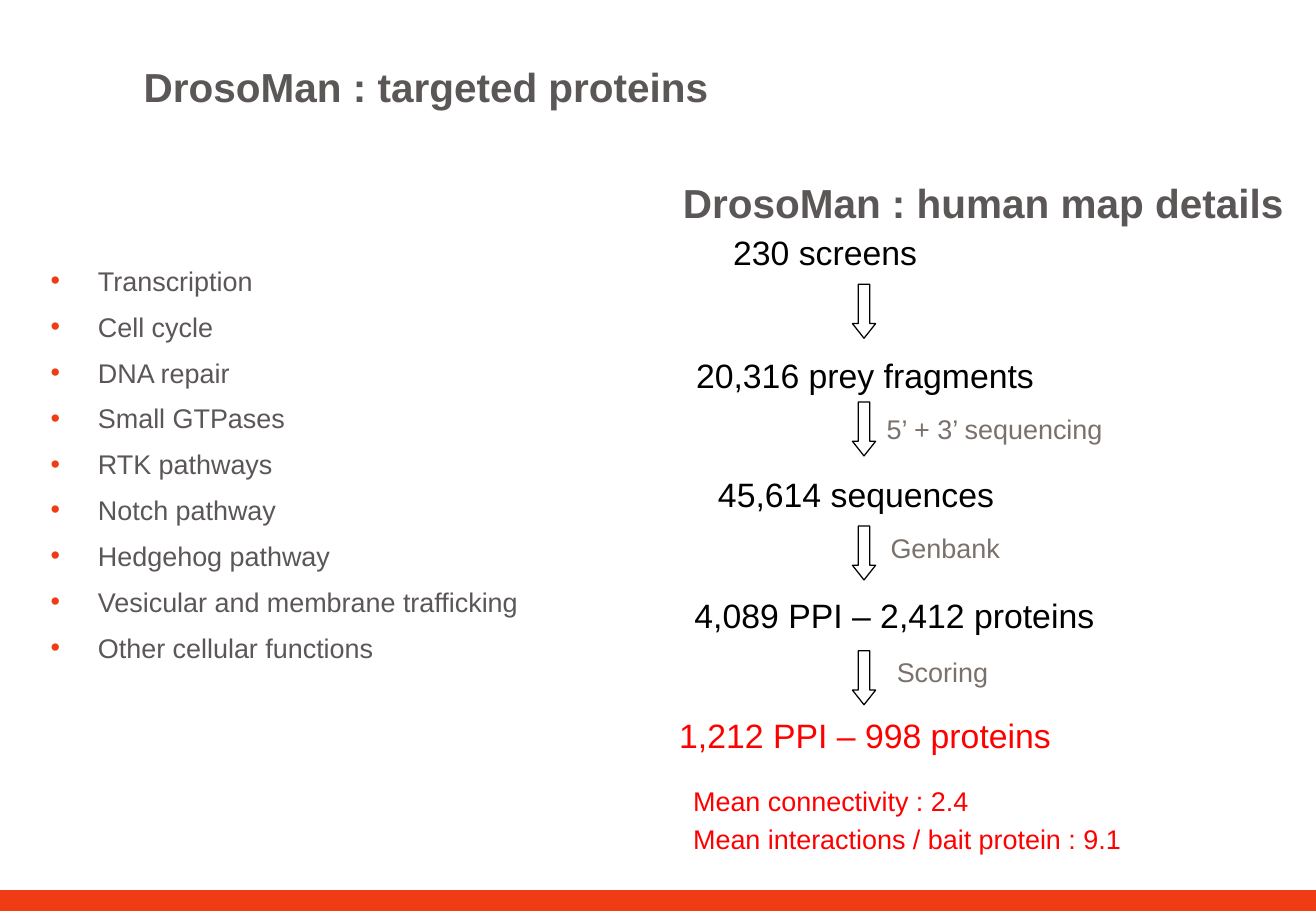
"""Build the DrosoMan slide of targeted proteins and human map details."""
from dataclasses import dataclass

from lxml.etree import SubElement
from pptx import Presentation
from pptx.dml.color import RGBColor
from pptx.enum.shapes import MSO_SHAPE
from pptx.enum.text import MSO_ANCHOR, MSO_AUTO_SIZE, PP_ALIGN
from pptx.oxml.ns import qn
from pptx.slide import Slide
from pptx.text.text import TextFrame, _Paragraph
from pptx.util import Pt


@dataclass(frozen=True)
class Theme:
    font: str = "Arial"
    accent: str = "F03C14"
    heading: str = "5C5757"
    stage: str = "000000"
    method: str = "7A716C"
    result: str = "FF0000"
    heading_size: float = 24
    stage_size: float = 20
    body_size: float = 16


@dataclass(frozen=True)
class Box:
    left: float
    top: float
    width: float
    height: float


@dataclass(frozen=True)
class Label:
    text: str
    box: Box
    size: float
    color: str


THEME = Theme()
HEADINGS = [
    Label(text, box, THEME.heading_size, THEME.heading)
    for text, box in [
        ("DrosoMan : targeted proteins", Box(0, 23, 505, 56)),
        ("DrosoMan : human map details", Box(264, 78, 637.5, 84)),
    ]
]
STAGES = [
    Label(text, Box(left, top, width, 31.5), THEME.stage_size, color)
    for text, left, top, width, color in [
        ("230 screens", 427.5, 134, 124.5, THEME.stage),
        ("20,316 prey fragments", 405.5, 206.75, 216, THEME.stage),
        ("45,614 sequences", 418.5, 277.25, 179.5, THEME.stage),
        ("4,089 PPI – 2,412 proteins", 404.5, 348.75, 253.5, THEME.stage),
        ("1,212 PPI – 998 proteins", 395.5, 420.25, 237, THEME.result),
    ]
]
METHODS = [
    Label(text, Box(left, top, width, 26.5), THEME.body_size, THEME.method)
    for text, left, top, width in [
        ("5’ + 3’ sequencing", 518.5, 240.75, 144),
        ("Genbank", 520.75, 311.25, 80),
        ("Scoring", 524.5, 385.25, 69),
    ]
]
ARROW_TOPS = [168.5, 238.25, 311.75, 385.75]
TARGETS = [
    "Transcription",
    "Cell cycle",
    "DNA repair",
    "Small GTPases",
    "RTK pathways",
    "Notch pathway",
    "Hedgehog pathway",
    "Vesicular and membrane trafficking",
    "Other cellular functions",
]
MEANS = ["Mean connectivity : 2.4", "Mean interactions / bait protein : 9.1"]


def add_frame(slide: Slide, box: Box, wrap: bool = True) -> TextFrame:
    """Add a text box and return its text frame."""
    frame = slide.shapes.add_textbox(
        Pt(box.left), Pt(box.top), Pt(box.width), Pt(box.height)
    ).text_frame
    frame.word_wrap = wrap
    return frame


def add_run(paragraph: _Paragraph, text: str, size: float, color: str, bold: bool = False) -> None:
    """Add one styled run to a paragraph."""
    run = paragraph.add_run()
    run.text = text
    run.font.name = THEME.font
    run.font.size = Pt(size)
    run.font.bold = bold
    run.font.color.rgb = RGBColor.from_string(color)


def add_heading(slide: Slide, heading: Label) -> None:
    """Add a bold heading centred in its box."""
    frame = add_frame(slide, heading.box)
    frame.vertical_anchor = MSO_ANCHOR.MIDDLE
    frame.paragraphs[0].alignment = PP_ALIGN.CENTER
    add_run(frame.paragraphs[0], heading.text, heading.size, heading.color, bold=True)


def add_label(slide: Slide, label: Label) -> None:
    """Add a single-line label that fits its text."""
    frame = add_frame(slide, label.box, wrap=False)
    frame.auto_size = MSO_AUTO_SIZE.SHAPE_TO_FIT_TEXT
    add_run(frame.paragraphs[0], label.text, label.size, label.color)


def set_indent(paragraph: _Paragraph, margin: float, first_line: float) -> None:
    """Set the left margin and first-line indent."""
    properties = paragraph._p.get_or_add_pPr()
    properties.set("marL", str(Pt(margin)))
    properties.set("indent", str(Pt(first_line)))


def add_bullet(paragraph: _Paragraph) -> None:
    """Give a paragraph a bullet in the accent colour."""
    properties = paragraph._p.get_or_add_pPr()
    bullet_color = SubElement(properties, qn("a:buClr"))
    SubElement(bullet_color, qn("a:srgbClr"), val=THEME.accent)
    SubElement(properties, qn("a:buFont"), typeface=THEME.font)
    SubElement(properties, qn("a:buChar"), char="•")


def add_targets(slide: Slide) -> None:
    """Add the bulleted list of targeted protein groups."""
    frame = add_frame(slide, Box(23, 157, 312, 335))
    for index, target in enumerate(TARGETS):
        paragraph = frame.add_paragraph() if index else frame.paragraphs[0]
        set_indent(paragraph, 28, -28)
        add_bullet(paragraph)
        paragraph.line_spacing = 0.8
        paragraph.space_before = Pt(3.4 if index else 0)
        paragraph.space_after = Pt(8.4)
        add_run(paragraph, target, THEME.body_size, THEME.heading)


def add_means(slide: Slide) -> None:
    """Add the mean values below the last stage."""
    frame = add_frame(slide, Box(377.25, 461.5, 390, 49.5))
    for index, mean in enumerate(MEANS):
        paragraph = frame.add_paragraph() if index else frame.paragraphs[0]
        set_indent(paragraph, 37.5, -11)
        paragraph.space_before = Pt(3.5 if index else 0)
        add_run(paragraph, mean, THEME.body_size, THEME.result)


def add_arrow(slide: Slide, top: float) -> None:
    """Add an outlined arrow between two stages."""
    arrow = slide.shapes.add_shape(
        MSO_SHAPE.DOWN_ARROW, Pt(505.25), Pt(top), Pt(13.75), Pt(32)
    )
    arrow.adjustments[0] = 0.5
    arrow.adjustments[1] = 0.63
    arrow.shadow.inherit = False
    arrow.fill.background()
    arrow.line.color.rgb = RGBColor.from_string(THEME.stage)
    arrow.line.width = Pt(0.75)


def add_footer(slide: Slide) -> None:
    """Add the accent bar along the bottom edge."""
    footer = slide.shapes.add_shape(
        MSO_SHAPE.RECTANGLE, Pt(0), Pt(528.5), Pt(780), Pt(11.5)
    )
    footer.shadow.inherit = False
    footer.fill.solid()
    footer.fill.fore_color.rgb = RGBColor.from_string(THEME.accent)
    footer.line.color.rgb = RGBColor.from_string(THEME.accent)
    footer.line.width = Pt(2)


def main() -> None:
    """Build and save the slide."""
    deck = Presentation()
    deck.slide_width, deck.slide_height = Pt(780), Pt(540)
    slide = deck.slides.add_slide(deck.slide_layouts[6])
    add_footer(slide)
    for heading in HEADINGS:
        add_heading(slide, heading)
    add_targets(slide)
    for label in STAGES + METHODS:
        add_label(slide, label)
    for top in ARROW_TOPS:
        add_arrow(slide, top)
    add_means(slide)
    deck.save("out.pptx")


if __name__ == "__main__":
    main()
